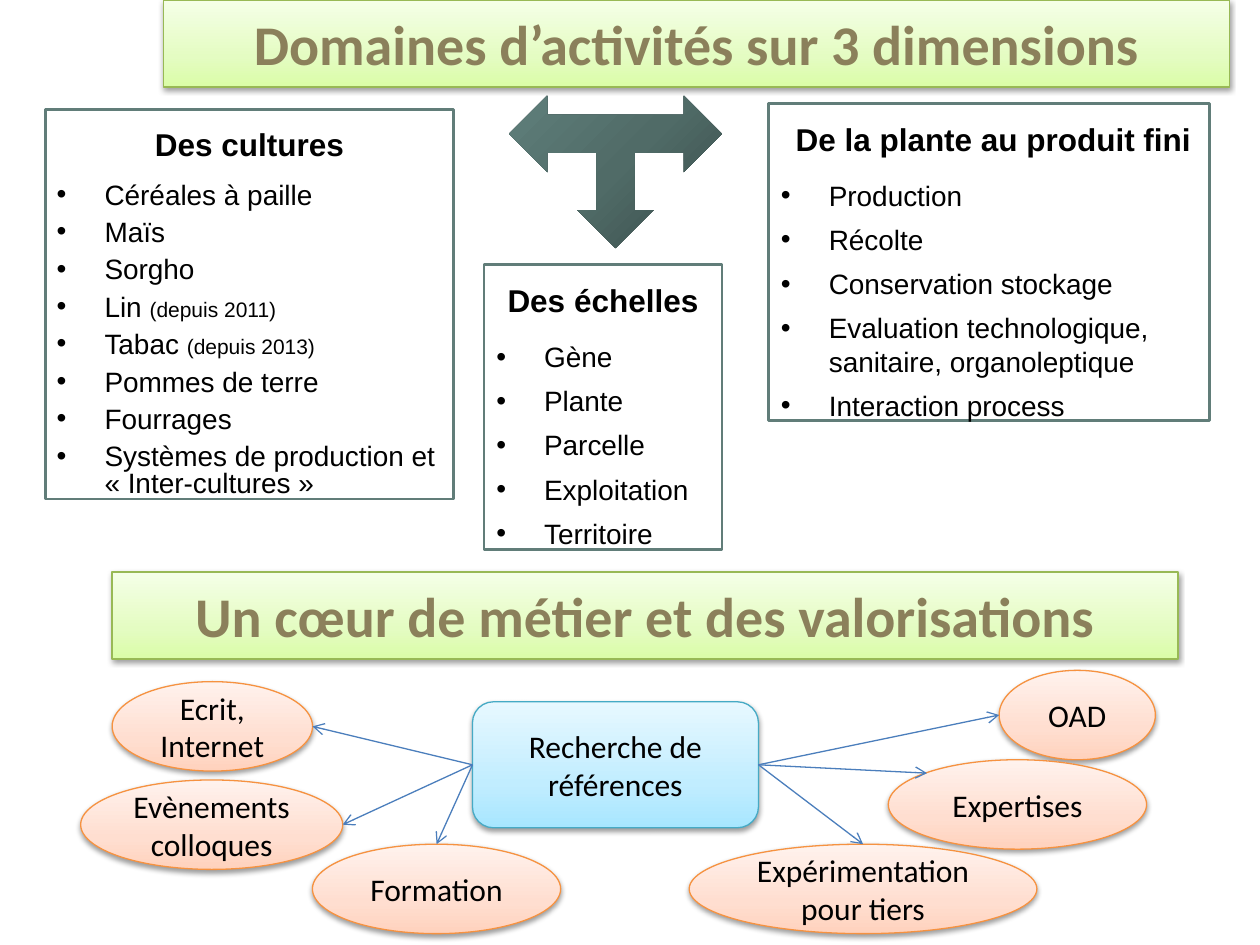
from pptx import Presentation
from pptx.dml.color import RGBColor
from pptx.enum.shapes import MSO_CONNECTOR, MSO_SHAPE
from pptx.enum.text import MSO_ANCHOR, MSO_AUTO_SIZE, PP_ALIGN
from pptx.oxml import parse_xml
from pptx.oxml.ns import nsdecls, qn
from pptx.util import Inches, Pt


def color(text):
    return RGBColor.from_string(text)


def assign(item, values):
    for name, value in values.items():
        setattr(item, name, value)


class Deck:
    HEAD = dict(name="Calibri", size=Pt(32), bold=True)
    NODE = dict(name="Calibri", size=Pt(18), bold=False)
    TOP = dict(name="Arial", size=Pt(18), bold=True)
    ITEM = dict(name="Arial", size=Pt(16), bold=False)
    NOTE = dict(name="Arial", size=Pt(12), bold=False)
    # Gradient stops and outline
    GREEN = ([(0, "DAFDA7"), (35, "E4FCC2"), (100, "F5FFE7")], "98B955")
    BLUE = ([(0, "A7E6FF"), (35, "C1EDFF"), (100, "E7F8FF")], "46AAC5")
    PEACH = ([(0, "FFD2BD"), (35, "FFDED0"), (100, "FFF2ED")], "F69240")
    SLATE = [(0, "384B49"), (50, "506B67"), (100, "5F7F7B")]

    def __init__(self):
        self.prs = Presentation()
        self.prs.slide_width, self.prs.slide_height = Inches(10), Inches(7.5)
        self.slide = self.prs.slides.add_slide(self.prs.slide_layouts[5])
        self.shapes = self.slide.shapes

    def blend(self, shape, stops, angle):
        shape.fill.solid()
        props = shape._element.spPr
        marks = "".join(
            f'<a:gs pos="{pos * 1000}"><a:srgbClr val="{tint}"/></a:gs>'
            for pos, tint in stops)
        props.replace(props.find(qn("a:solidFill")), parse_xml(
            f'<a:gradFill {nsdecls("a")} rotWithShape="1"><a:gsLst>{marks}</a:gsLst>'
            f'<a:lin ang="{angle * 60000}" scaled="0"/></a:gradFill>'))

    def stroke(self, shape, tint, width):
        shape.line.color.rgb = color(tint)
        shape.line.width = Pt(width)

    def glow(self, shape):
        shape.shadow.inherit = False
        shape._element.spPr.find(qn("a:effectLst")).append(parse_xml(
            f'<a:outerShdw {nsdecls("a")} blurRad="{Pt(3.1)}" dist="{Pt(1.6)}" '
            'dir="5400000" rotWithShape="0"><a:srgbClr val="000000">'
            '<a:alpha val="38000"/></a:srgbClr></a:outerShdw>'))

    def label(self, para, text, style, tint="000000"):
        run = para.add_run()
        run.text = text
        assign(run.font, style)
        run.font.color.rgb = color(tint)

    def panel(self, shape, look, text, style, tint="000000"):
        stops, edge = look
        self.blend(shape, stops, 270)
        self.stroke(shape, edge, 0.75)
        self.glow(shape)
        frame = shape.text_frame
        assign(frame, dict(word_wrap=True, auto_size=MSO_AUTO_SIZE.NONE,
                           vertical_anchor=MSO_ANCHOR.MIDDLE))
        para = frame.paragraphs[0]
        para.alignment = PP_ALIGN.CENTER
        self.label(para, text, style, tint)

    def title(self, left, top, text):
        shape = self.shapes.title
        assign(shape, dict(left=Inches(left), top=Inches(top),
                           width=Inches(8.46), height=Inches(0.69)))
        self.panel(shape, self.GREEN, text, self.HEAD, "8B805B")

    def shape(self, kind, spot):
        return self.shapes.add_shape(kind, *map(Inches, spot))

    def band(self, left, top, text):
        shape = self.shape(MSO_SHAPE.RECTANGLE, (left, top, 8.46, 0.69))
        self.panel(shape, self.GREEN, text, self.HEAD, "8B805B")

    def node(self, kind, spot, look, text):
        shape = self.shape(kind, spot)
        self.panel(shape, look, text, self.NODE)
        return shape

    def arrow(self, spot):
        shape = self.shape(MSO_SHAPE.LEFT_RIGHT_UP_ARROW, spot)
        shape.rotation = 180
        shape.shadow.inherit = False
        self.blend(shape, self.SLATE, 45)
        shape.line.fill.background()

    def bullet(self, para):
        props = para._p.get_or_add_pPr()
        props.set("marL", str(Inches(0.38)))
        props.set("indent", str(-Inches(0.38)))
        for tag in ('buFont typeface="Arial"', 'buChar char="•"'):
            name, rest = tag.split(" ")
            props.append(parse_xml(f'<a:{name} {nsdecls("a")} {rest}/>'))

    def card(self, spot, head, items, pad=0.1, pitch=None):
        box = self.shapes.add_textbox(*map(Inches, spot))
        self.stroke(box, "617D79", 1.5)
        frame = box.text_frame
        assign(frame, dict(
            word_wrap=True, auto_size=MSO_AUTO_SIZE.SHAPE_TO_FIT_TEXT,
            margin_left=Inches(pad), margin_right=Inches(pad),
            margin_top=Inches(pad + 0.03), margin_bottom=Inches(pad / 2)))
        first = frame.paragraphs[0]
        assign(first, dict(alignment=PP_ALIGN.CENTER, space_after=Pt(6)))
        self.label(first, head, self.TOP)
        for item in items:
            para = frame.add_paragraph()
            self.bullet(para)
            assign(para, dict(space_before=Pt(6), line_spacing=pitch))
            name, mark, note = item.partition("(")
            self.label(para, name, self.ITEM)
            if mark:
                self.label(para, mark + note, self.NOTE)

    def link(self, hub, side, x, y):
        line = self.shapes.add_connector(
            MSO_CONNECTOR.STRAIGHT, 0, 0, Inches(x), Inches(y))
        line.begin_connect(hub, side)
        self.stroke(line, "4B7EBC", 0.75)
        line.line._get_or_add_ln().append(
            parse_xml(f'<a:tailEnd {nsdecls("a")} type="arrow"/>'))
        line._element.spPr.append(parse_xml(f'<a:effectLst {nsdecls("a")}/>'))


def main():
    deck = Deck()

    # Three dimensions
    deck.title(1.3, 0, "Domaines d’activités sur 3 dimensions")
    deck.card((0.36, 0.87, 3.24, 3.09), "Des cultures", [
        "Céréales à paille", "Maïs", "Sorgho", "Lin (depuis 2011)",
        "Tabac (depuis 2013)", "Pommes de terre", "Fourrages",
        "Systèmes de production et « Inter-cultures »"], 0.09, 0.8)
    deck.card((6.1, 0.82, 3.5, 2.52), " De la plante au produit fini", [
        "Production", "Récolte", "Conservation stockage",
        "Evaluation technologique, sanitaire, organoleptique",
        "Interaction process"])
    deck.card((3.84, 2.1, 1.89, 2.26), "Des échelles", [
        "Gène", "Plante", "Parcelle", "Exploitation", "Territoire"])
    deck.arrow((4.04, 0.76, 1.69, 1.21))

    # Core work and its outlets
    deck.band(0.89, 4.54, "Un cœur de métier et des valorisations")
    hub = deck.node(MSO_SHAPE.ROUNDED_RECTANGLE, (3.75, 5.57, 2.27, 1),
                    deck.BLUE, "Recherche de références")

    # Left, top, width, text, hub side, arrow end as shares of the oval
    ovals = [
        (0.89, 5.41, 1.59, "Ecrit, Internet", 1, 1, 0.5),
        (0.64, 6.19, 2.08, "Evènements colloques", 1, 1, 0.5),
        (2.48, 6.7, 1.97, "Formation", 1, 0.5, 0),
        (7.93, 5.32, 1.24, "OAD", 3, 0, 0.5),
        (7.05, 6.03, 2.05, "Expertises", 3, 0.15, 0.15),
        (5.47, 6.7, 2.76, "Expérimentation pour tiers", 3, 0.5, 0),
    ]
    high = 0.71
    for left, top, wide, text, *_ in ovals:
        deck.node(MSO_SHAPE.OVAL, (left, top, wide, high), deck.PEACH, text)
    for left, top, wide, _, side, across, down in ovals:
        deck.link(hub, side, left + wide * across, top + high * down)

    deck.prs.save("out.pptx")


if __name__ == "__main__":
    main()
